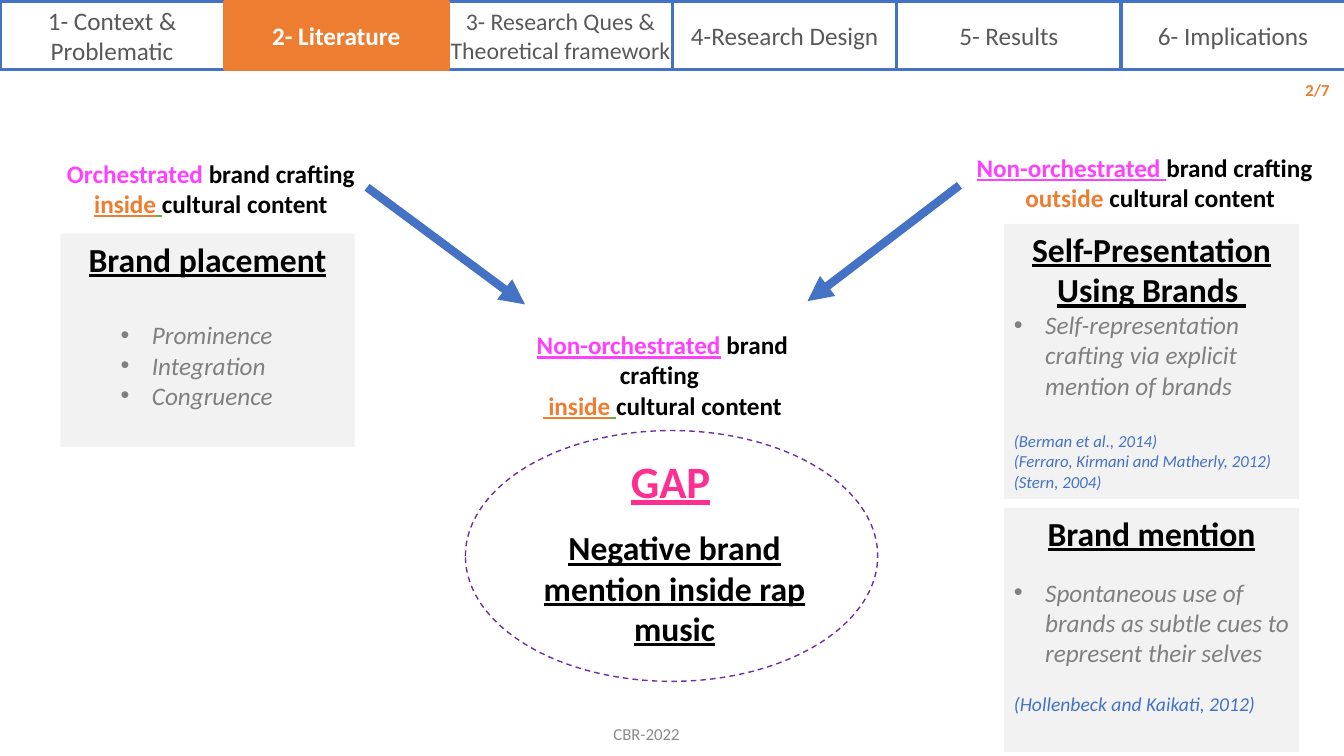
from lxml import etree
from pptx import Presentation
from pptx.dml.color import RGBColor
from pptx.enum import dml, shapes, text
from pptx.oxml import ns
from pptx.util import Cm, Pt

BLUE, ORANGE, PINK, BLACK = "4472C4", "ED7D31", "FF40FF", "000000"
PALE, GREY, DARK = "F2F2F2", "808080", "595959"

STYLES = {
    "heading": dict(size=24, color=BLACK, bold=True, underline=True),
    "point": dict(size=18, color=GREY, italic=True),
    "source": dict(size=12, color=BLUE, italic=True),
    "late source": dict(size=14, color=BLUE, italic=True),
    "gap": dict(size=32, color="FF2F92", bold=True, underline=True),
    "plain": dict(size=18, color=BLACK, bold=True),
    "craft": dict(size=18, color=PINK, bold=True),
    "craft line": dict(size=18, color=PINK, bold=True, underline=True),
    "place": dict(size=18, color=ORANGE, bold=True),
    "place line": dict(size=18, color=ORANGE, bold=True, underline=True),
    "space line": dict(size=18, color="70AD47", bold=True, underline=True),
    "tab": dict(size=18, color=DARK),
    "long tab": dict(size=17, color=DARK),
    "active tab": dict(size=18, color="FFFFFF", bold=True),
    "footer": dict(size=12, color="8C8C8C"),
    "page": dict(size=12, color=ORANGE, bold=True),
}

TABS = [
    ("1- Context & Problematic", "tab"),
    ("2- Literature", "active tab"),
    ("3- Research Ques & Theoretical framework", "long tab"),
    ("4-Research Design", "tab"),
    ("5- Results", "tab"),
    ("6- Implications", "tab"),
]
TAB_TOP, TAB_WIDTH, TAB_HEIGHT = 0.03, 5.65, 1.73

CARDS = [
    ((1.52, 5.89, 7.42, 5.38), "Brand placement", 29, 2.06,
     ["Prominence", "Integration", "Congruence"], 0, "source", []),
    ((25.3, 5.64, 7.44, 6.93), "Self-Presentation Using Brands ", 0, 0.79,
     ["Self-representation crafting via explicit mention of brands"], 22, "source",
     ["(Berman et al., 2014)", "(Ferraro, Kirmani and Matherly, 2012)", "(Stern, 2004)"]),
    ((25.3, 12.8, 7.44, 6.15), "Brand mention", 17, 0.79,
     ["Spontaneous use of brands as subtle cues to represent their selves"], 17,
     "late source", ["(Hollenbeck and Kaikati, 2012)"]),
]

LABELS = [
    ((12.9, 13.16, 8.2, 4.19), [[("Negative brand mention inside rap music", "heading")]]),
    ((24.18, 3.71, 9.47, 2.49), [
        [("Non-orchestrated ", "craft line"), ("brand crafting ", "plain")],
        [(" outside ", "place"), ("cultural content", "plain")]]),
    ((0.97, 3.86, 8.69, 2.49), [
        [("Orchestrated ", "craft"), ("brand crafting ", "plain"),
         ("inside", "place line"), (" ", "space line"), ("cultural content", "plain")]]),
    ((12.8, 11.3, 8.2, 2.49), [[("GAP", "gap")]]),
    ((12.37, 8.18, 8.64, 3.25), [
        [("Non-orchestrated", "craft line"), (" ", "craft"), ("brand crafting ", "plain")],
        [(" inside", "place line"), (" ", "space line"), ("cultural content", "plain")]]),
    ((15.19, 18.11, 2.21, 0.76), [[("CBR-2022", "footer")]]),
    ((32.26, 1.75, 1.5, 1.02), [[("2/7", "page")]]),
]
GAP_OVAL = (11.73, 10.85, 10.39, 6.32)
ARROWS = [(9.25, 4.72, 13.23, 7.67), (24.18, 4.67, 20.35, 7.59)]


def rgb(value):
    return RGBColor.from_string(value)


def write(paragraph, runs, align=text.PP_ALIGN.CENTER, before=0):
    paragraph.alignment = align
    paragraph.space_before = Pt(before)
    for words, style in runs:
        run = paragraph.add_run()
        run.text = words
        run.font.name = "Calibri"
        for name, value in STYLES[style].items():
            if name == "color":
                run.font.color.rgb = rgb(value)
            else:
                setattr(run.font, name, Pt(value) if name == "size" else value)


def add_bullet(paragraph, indent):
    props = paragraph._p.get_or_add_pPr()
    props.set("marL", str(Cm(indent)))
    props.set("indent", str(-Cm(0.79)))
    etree.SubElement(props, ns.qn("a:buFont")).set("typeface", "Arial")
    etree.SubElement(props, ns.qn("a:buChar")).set("char", "•")


def add_box(slide, kind, place, fill=None, line=None, width=1):
    box = slide.shapes.add_shape(kind, *map(Cm, place))
    box.shadow.inherit = False
    if fill:
        box.fill.solid()
        box.fill.fore_color.rgb = rgb(fill)
    else:
        box.fill.background()
    if line:
        box.line.color.rgb = rgb(line)
        box.line.width = Pt(width)
    else:
        box.line.fill.background()
    return box


def add_card(slide, place, heading, lead, indent, points, rest, source_style, sources):
    frame = add_box(slide, shapes.MSO_SHAPE.RECTANGLE, place, PALE).text_frame
    frame.vertical_anchor = text.MSO_ANCHOR.TOP
    write(frame.paragraphs[0], [(heading, "heading")])
    for i, point in enumerate(points):
        paragraph = frame.add_paragraph()
        write(paragraph, [(point, "point")], text.PP_ALIGN.LEFT, 0 if i else lead)
        add_bullet(paragraph, indent)
    for i, source in enumerate(sources):
        write(frame.add_paragraph(), [(source, source_style)],
              text.PP_ALIGN.LEFT, 0 if i else rest)


def add_label(slide, place, lines):
    frame = slide.shapes.add_textbox(*map(Cm, place)).text_frame
    style = lines[0][0][1]
    frame.word_wrap = style != "footer"
    if style == "page":
        frame.vertical_anchor = text.MSO_ANCHOR.MIDDLE
    align = text.PP_ALIGN.RIGHT if style == "page" else text.PP_ALIGN.CENTER
    for i, runs in enumerate(lines):
        write(frame.add_paragraph() if i else frame.paragraphs[0], runs, align)


def add_arrow(slide, ends):
    arrow = slide.shapes.add_connector(shapes.MSO_CONNECTOR.STRAIGHT, *map(Cm, ends))
    arrow.line.color.rgb = rgb(BLUE)
    arrow.line.width = Pt(6)
    etree.SubElement(arrow.line._get_or_add_ln(), ns.qn("a:tailEnd")).set("type", "triangle")
    etree.SubElement(arrow._element.spPr, ns.qn("a:effectLst"))


def add_tab(slide, index, words, style):
    active = style == "active tab"
    place = (index * TAB_WIDTH, TAB_TOP, TAB_WIDTH, TAB_HEIGHT)
    frame = add_box(slide, shapes.MSO_SHAPE.FLOWCHART_PROCESS, place,
                    ORANGE if active else None, ORANGE if active else BLUE, 2.25).text_frame
    for side in ("left", "right", "top", "bottom"):
        setattr(frame, f"margin_{side}", 0)
    frame.vertical_anchor = text.MSO_ANCHOR.MIDDLE
    write(frame.paragraphs[0], [(words, style)])


def main():
    deck = Presentation()
    deck.slide_width, deck.slide_height = Cm(33.87), Cm(19.05)
    slide = deck.slides.add_slide(deck.slide_layouts[6])
    for card in CARDS:
        add_card(slide, *card)
    oval = add_box(slide, shapes.MSO_SHAPE.OVAL, GAP_OVAL, line="7030A0")
    oval.line.dash_style = dml.MSO_LINE.DASH
    for label in LABELS:
        add_label(slide, *label)
    for ends in ARROWS:
        add_arrow(slide, ends)
    for index, tab in sorted(enumerate(TABS), key=lambda item: item[1][1] == "active tab"):
        add_tab(slide, index, *tab)
    deck.save("out.pptx")


if __name__ == "__main__":
    main()
